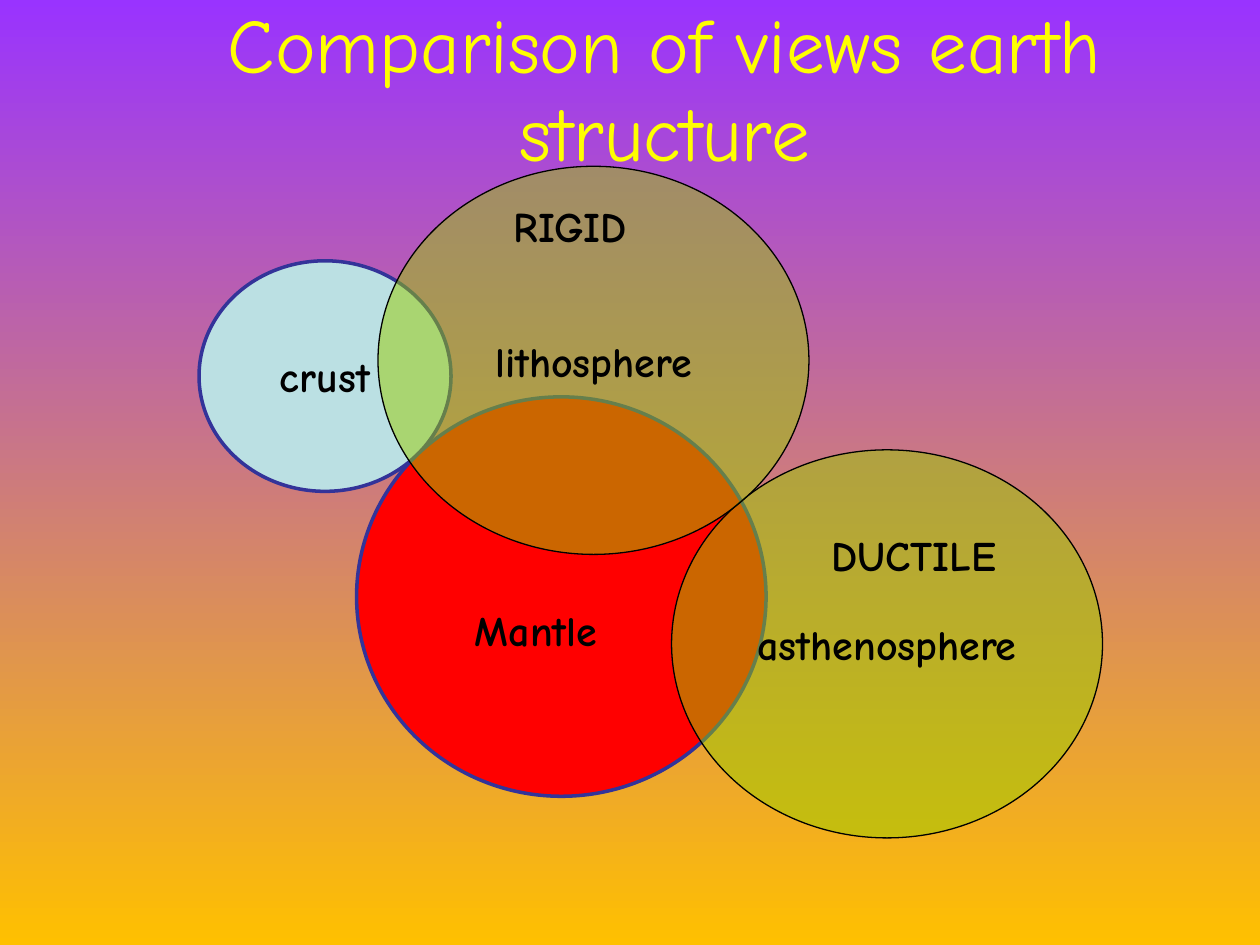
from pptx import Presentation
from pptx.dml.color import RGBColor
from pptx.enum.shapes import MSO_SHAPE
from pptx.enum.text import MSO_ANCHOR, PP_ALIGN
from pptx.oxml.ns import qn
from pptx.util import Inches, Pt
from lxml.etree import SubElement


def color(value):
    return RGBColor.from_string(value)


def set_attributes(target, values):
    for name, value in values.items():
        setattr(target, name, value)


class VennSlide:
    """Draws the slide's background, circles and labels in one shared style."""

    label_font = {"name": "Comic Neue", "size": Pt(24), "bold": True}
    title_font = {"name": "Comic Neue", "size": Pt(44), "bold": False}

    def __init__(self, presentation):
        self.slide = presentation.slides.add_slide(presentation.slide_layouts[6])

    def background(self, top, bottom):
        fill = self.slide.background.fill
        fill.gradient()
        fill.gradient_angle = 270
        for stop, value in zip(fill.gradient_stops, (top, bottom)):
            stop.color.rgb = color(value)

    def add_text(self, shape, text, font, text_color, paragraph_format):
        shape.text_frame.word_wrap = True
        paragraph = shape.text_frame.paragraphs[0]
        paragraph.text = text
        set_attributes(paragraph, paragraph_format)
        for run in paragraph.runs:
            set_attributes(run.font, font)
            run.font.color.rgb = color(text_color)

    def title(self, text, box):
        shape = self.slide.shapes.add_textbox(*map(Inches, box))
        margins = {"margin_left": Inches(0.07), "margin_right": Inches(0.07),
                   "margin_top": Inches(0.03), "margin_bottom": Inches(0.03)}
        set_attributes(shape.text_frame, margins)
        self.add_text(shape, text, self.title_font, "FFFF00",
                      {"alignment": PP_ALIGN.CENTER, "line_spacing": 0.95})

    def label(self, text, left, top, width):
        shape = self.slide.shapes.add_textbox(*map(Inches, (left, top, width, 0.5)))
        self.add_text(shape, text, self.label_font, "000000", {"alignment": PP_ALIGN.LEFT})

    def circle(self, box, fill, line, line_width, text="", opacity=100):
        shape = self.slide.shapes.add_shape(MSO_SHAPE.OVAL, *map(Inches, box))
        shape.shadow.inherit = False
        shape.fill.solid()
        shape.fill.fore_color.rgb = color(fill)
        if opacity < 100:
            fill_color = shape.element.spPr.find(qn("a:solidFill"))[0]
            SubElement(fill_color, qn("a:alpha"), val=str(opacity * 1000))
        shape.line.color.rgb = color(line)
        shape.line.width = Pt(line_width)
        if text:
            shape.text_frame.vertical_anchor = MSO_ANCHOR.MIDDLE
            self.add_text(shape, text, self.label_font, "000000",
                          {"alignment": PP_ALIGN.CENTER})

    def layer(self, box, fill, text=""):
        self.circle(box, fill, "333399", 2, text)

    def zone(self, text, left, top):
        self.circle((left, top, 3.42, 3.08), "99CC00", "000000", 0.75, text, 50)


def main():
    presentation = Presentation()
    set_attributes(presentation, {"slide_width": Inches(10), "slide_height": Inches(7.5)})
    venn = VennSlide(presentation)
    venn.background("9933FF", "FFC000")
    venn.title("Comparison of views earth\vstructure", (1.3, 0, 7.95, 1.45))
    venn.layer((1.58, 2.07, 2, 1.83), "BBE0E3", "crust")
    venn.layer((2.83, 3.15, 3.25, 3.17), "FF0000")
    venn.label("Mantle", 3.67, 4.75, 1.42)
    venn.zone("asthenosphere", 5.33, 3.57)
    venn.zone("lithosphere", 3, 1.32)
    venn.label("RIGID", 3.98, 1.54, 1.25)
    venn.label("DUCTILE", 6.5, 4.15, 1.75)
    presentation.save("out.pptx")


if __name__ == "__main__":
    main()
